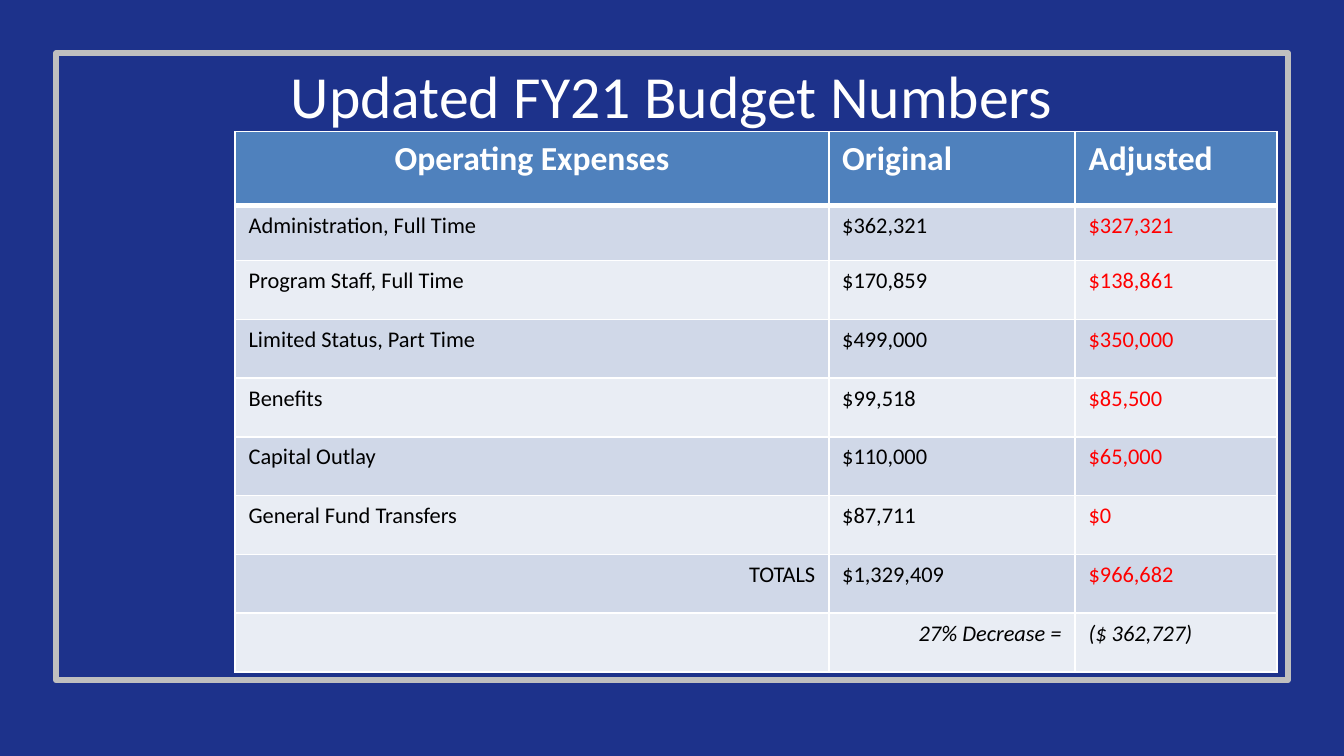
from lxml.etree import SubElement
from pptx import Presentation
from pptx.dml.color import RGBColor
from pptx.enum.shapes import MSO_SHAPE
from pptx.enum.text import MSO_ANCHOR, PP_ALIGN
from pptx.oxml.ns import qn
from pptx.util import Pt

WHITE, BLACK, RED = "FFFFFF", "000000", "FF0000"
HEADER_FILL, BANDS = "4F81BD", ("E9EDF4", "D0D8E8")

ROWS = [
    ("Operating Expenses", "Original", "Adjusted"),
    ("Administration, Full Time", "$362,321", "$327,321"),
    ("Program Staff, Full Time", "$170,859", "$138,861"),
    ("Limited Status, Part Time", "$499,000", "$350,000"),
    ("Benefits", "$99,518", "$85,500"),
    ("Capital Outlay", "$110,000", "$65,000"),
    ("General Fund Transfers", "$87,711", "$0"),
    ("TOTALS", "$1,329,409", "$966,682"),
    ("", "27% Decrease =", "($ 362,727)"),
]
COL_WIDTHS = [318, 132, 108]
ROW_HEIGHTS = [39.6, 29.5] + [31.5] * 7
ALIGNMENTS = {
    (0, 0): PP_ALIGN.CENTER,
    (7, 0): PP_ALIGN.RIGHT,
    (8, 1): PP_ALIGN.RIGHT,
}


def rgb(value):
    return RGBColor.from_string(value)


class SlideBuilder:
    font = "Calibri"

    def __init__(self, prs, background):
        self.s = prs.slides.add_slide(prs.slide_layouts[5])
        fill = self.s.background.fill
        fill.solid()
        fill.fore_color.rgb = rgb(background)

    def set_text(self, tf, text, size, color, align=PP_ALIGN.LEFT, bold=False, italic=False):
        tf.text = text
        p = tf.paragraphs[0]
        p.alignment = align
        for r in p.runs:
            r.font.name = self.font
            r.font.size = Pt(size)
            r.font.bold = bold
            r.font.italic = italic
            r.font.color.rgb = rgb(color)

    def frame(self, left, top, width, height, color, weight):
        sp = self.s.shapes.add_shape(
            MSO_SHAPE.RECTANGLE, Pt(left), Pt(top), Pt(width), Pt(height))
        sp.shadow.inherit = False
        sp.fill.background()
        sp.line.color.rgb = rgb(color)
        sp.line.width = Pt(weight)
        SubElement(sp.element.spPr.find(qn("a:ln")), qn("a:round"))

    def title(self, text, left, top, width, height):
        sp = self.s.shapes.title
        sp.left, sp.top, sp.width, sp.height = Pt(left), Pt(top), Pt(width), Pt(height)
        sp.text_frame.vertical_anchor = MSO_ANCHOR.MIDDLE
        self.set_text(sp.text_frame, text, 32, WHITE, PP_ALIGN.CENTER)

    def borders(self, cell, row):
        tcPr = cell._tc.get_or_add_tcPr()
        weights = {"L": 1, "R": 1, "T": 3 if row == 1 else 1, "B": 3 if row == 0 else 1}
        for side, weight in weights.items():
            ln = SubElement(tcPr, qn(f"a:ln{side}"), w=str(Pt(weight)))
            fill = SubElement(ln, qn("a:solidFill"))
            SubElement(fill, qn("a:srgbClr"), val=WHITE)

    def cell(self, cell, text, row, col):
        header, last = row == 0, row == len(ROWS) - 1
        self.borders(cell, row)
        cell.fill.solid()
        cell.fill.fore_color.rgb = rgb(HEADER_FILL if header else BANDS[row % 2])
        if not text:
            return
        if header:
            color = WHITE
        else:
            color = RED if col == 2 and not last else BLACK
        self.set_text(cell.text_frame, text, 18 if header else 12, color,
                      ALIGNMENTS.get((row, col), PP_ALIGN.LEFT), bold=header, italic=last)

    def table(self, rows, left, top, widths, heights):
        table = self.s.shapes.add_table(
            len(rows), len(widths), Pt(left), Pt(top),
            Pt(sum(widths)), Pt(sum(heights))).table
        for column, width in zip(table.columns, widths):
            column.width = Pt(width)
        for i, (values, height) in enumerate(zip(rows, heights)):
            table.rows[i].height = Pt(height)
            for j, text in enumerate(values):
                self.cell(table.cell(i, j), text, i, j)


def main():
    prs = Presentation()
    prs.slide_width, prs.slide_height = Pt(720), Pt(405)
    slide = SlideBuilder(prs, "1D328B")
    slide.frame(30, 28.5, 660, 336, "BFBFBF", 3)
    slide.title("Updated FY21 Budget Numbers", 36, 16.5, 648, 68)
    slide.table(ROWS, 126, 70.5, COL_WIDTHS, ROW_HEIGHTS)
    prs.save("out.pptx")


if __name__ == "__main__":
    main()
